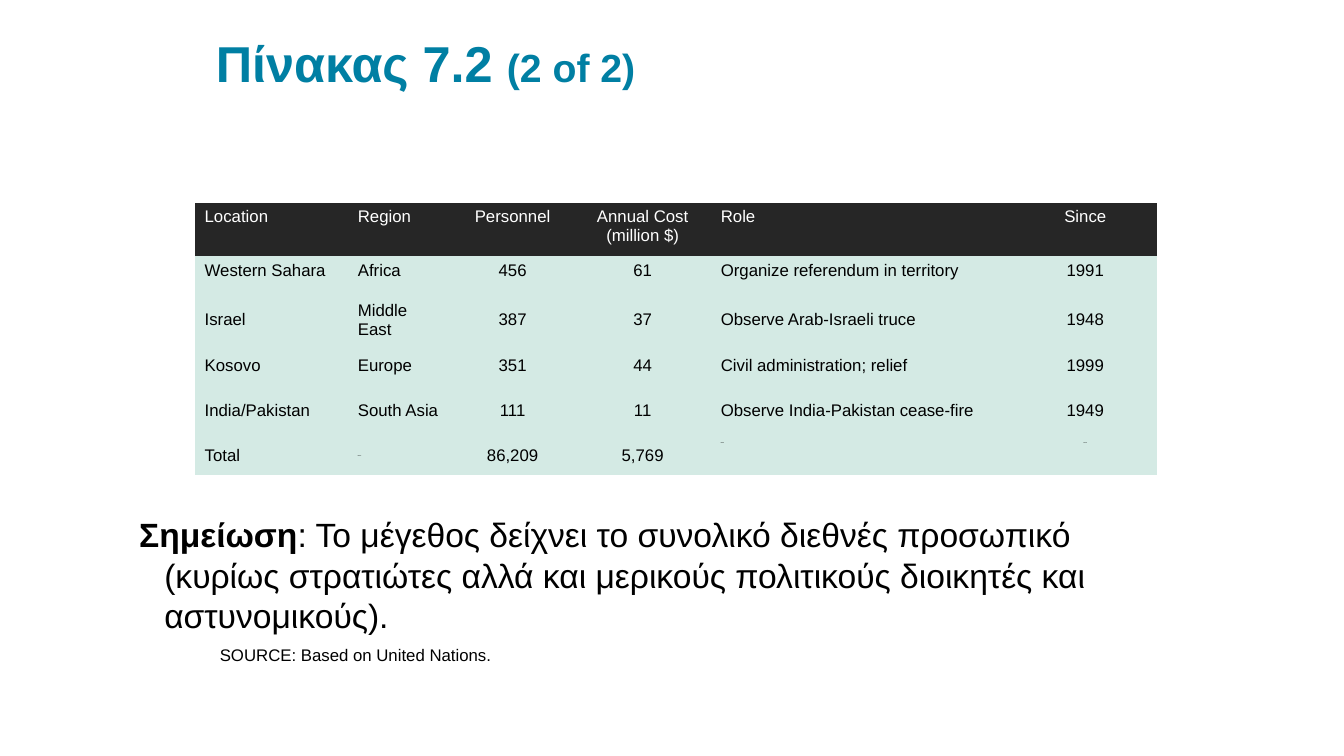
from pptx import Presentation
from pptx.dml.color import RGBColor
from pptx.enum.text import MSO_ANCHOR, PP_ALIGN
from pptx.util import Inches, Pt


def style(font, size, color="000000", bold=False):
    font.name, font.size, font.bold = "Arial", Pt(size), bold
    font.color.rgb = RGBColor.from_string(color)


def place(shape, left, top, width, height):
    """Set the position of a text shape and its tight margins."""
    shape.left, shape.top = Inches(left), Inches(top)
    shape.width, shape.height = Inches(width), Inches(height)
    frame = shape.text_frame
    frame.word_wrap = True
    frame.margin_left = frame.margin_right = 0
    frame.margin_top = frame.margin_bottom = Inches(0.02)
    return frame


deck = Presentation()
deck.slide_width, deck.slide_height = Inches(13.33), Inches(7.5)
slide = deck.slides.add_slide(deck.slide_layouts[5])

# Title
frame = place(slide.shapes.title, 2.14, 0.29, 9, 0.65)
frame.vertical_anchor = MSO_ANCHOR.BOTTOM
line = frame.paragraphs[0]
line.alignment = PP_ALIGN.LEFT
for text, size in (("Πίνακας 7.2 ", 36), ("(2 of 2)", 28)):
    run = line.add_run()
    run.text = text
    style(run.font, size, "007FA3", True)

# Table of missions
rows = [
    ("Location", "Region", "Personnel", "Annual Cost\n(million $)", "Role", "Since"),
    ("Western Sahara", "Africa", "456", "61", "Organize referendum in territory", "1991"),
    ("Israel", "Middle East", "387", "37", "Observe Arab-Israeli truce", "1948"),
    ("Kosovo", "Europe", "351", "44", "Civil administration; relief", "1999"),
    ("India/Pakistan", "South Asia", "111", "11", "Observe India-Pakistan cease-fire", "1949"),
    ("Total", "Blank", "86,209", "5,769", "Blank", "Blank"),
]
widths = (1.52, 1.02, 1.23, 1.35, 3, 1.43)
centred = (2, 3, 5)
top_cells = [(5, 4), (5, 5)]

table = slide.shapes.add_table(
    len(rows), len(widths), Inches(1.93), Inches(2.01), Inches(sum(widths)), Inches(2.7)
).table
table.horz_banding = table.first_row = False
# Table style without borders
table._tbl.tblPr[0].text = "{2D5ABB26-0587-4C30-8999-92F81FD0307C}"
for col, width in zip(table.columns, widths):
    col.width = Inches(width)
for r, texts in enumerate(rows):
    table.rows[r].height = Inches(0.37 if r % 2 else 0.53)
    for c, text in enumerate(texts):
        cell = table.cell(r, c)
        cell.text = text
        cell.fill.solid()
        cell.fill.fore_color.rgb = RGBColor.from_string("D4EAE4" if r else "262626")
        if r > 1 and (r, c) not in top_cells:
            cell.vertical_anchor = MSO_ANCHOR.MIDDLE
        for line in cell.text_frame.paragraphs:
            line.alignment = PP_ALIGN.CENTER if c in centred else PP_ALIGN.LEFT
            style(line.font, 1 if text == "Blank" else 12, "000000" if r else "FFFFFF")

# Note with a hanging indent
note = place(slide.shapes.add_textbox(0, 0, 0, 0), 1.38, 5.08, 10.3, 0.85)
line = note.paragraphs[0]
props = line._p.get_or_add_pPr()
props.set("marL", str(Inches(0.25)))
props.set("indent", str(Inches(-0.25)))
for text, bold in (
    ("Σημείωση", True),
    (": Το μέγεθος δείχνει το συνολικό διεθνές προσωπικό (κυρίως στρατιώτες "
     "αλλά και μερικούς πολιτικούς διοικητές και αστυνομικούς).", False),
):
    run = line.add_run()
    run.text = text
    style(run.font, 24, bold=bold)

# Source line
source = place(slide.shapes.add_textbox(0, 0, 0, 0), 2.18, 6.36, 9.05, 0.25)
line = source.paragraphs[0]
line.text = "SOURCE: Based on United Nations."
line.line_spacing = 1.1
style(line.font, 12)

deck.save("out.pptx")
